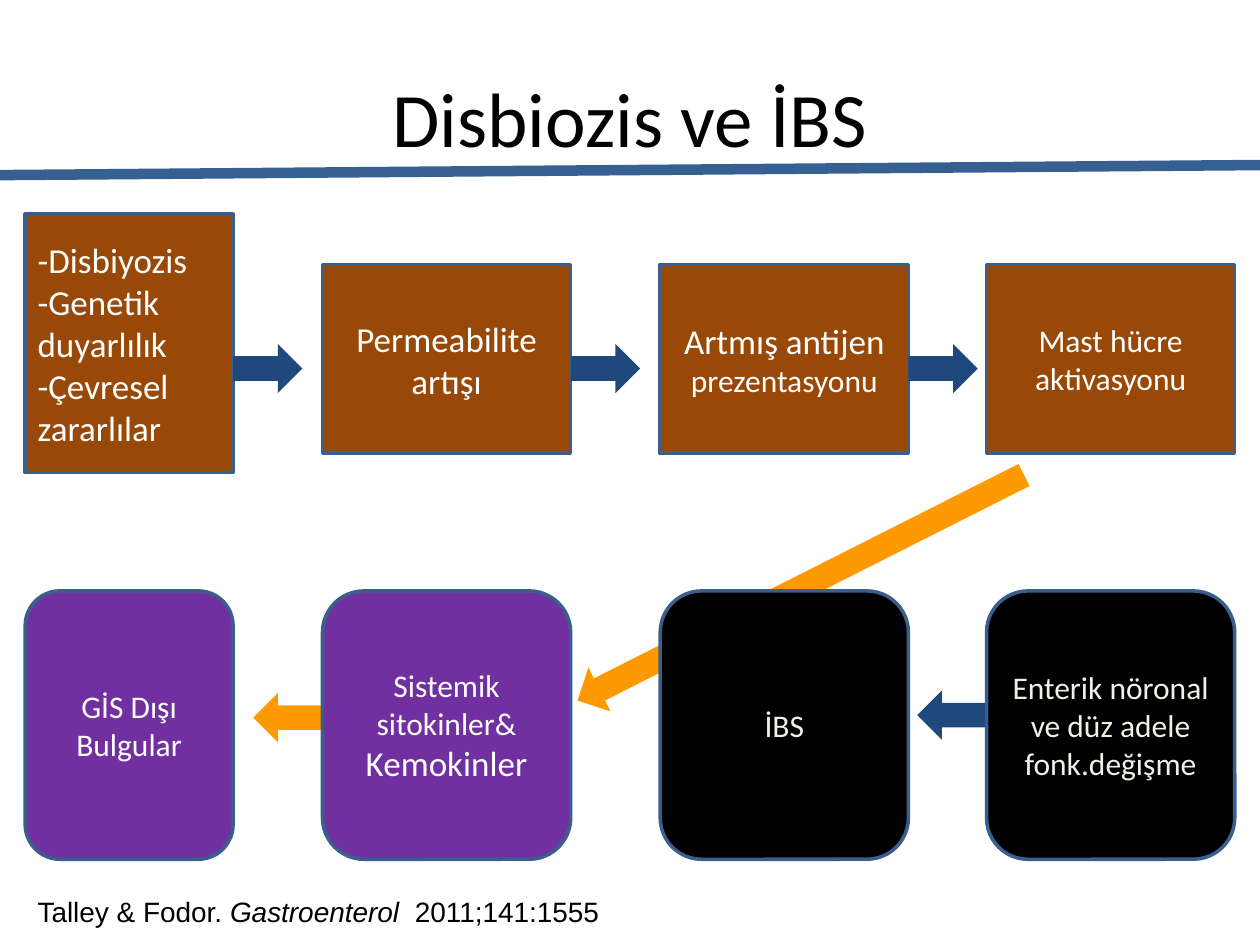
from lxml import etree
from pptx import Presentation
from pptx.dml.color import RGBColor
from pptx.enum.shapes import MSO_CONNECTOR, MSO_SHAPE
from pptx.enum.text import MSO_ANCHOR, PP_ALIGN
from pptx.oxml.ns import qn
from pptx.util import Inches, Pt

RECTANGLE = MSO_SHAPE.RECTANGLE
ROUNDED = MSO_SHAPE.ROUNDED_RECTANGLE
ARROW = MSO_SHAPE.RIGHT_ARROW
STRAIGHT = MSO_CONNECTOR.STRAIGHT
LEFT, CENTER = PP_ALIGN.LEFT, PP_ALIGN.CENTER
TOP, MIDDLE = MSO_ANCHOR.TOP, MSO_ANCHOR.MIDDLE

BROWN, PURPLE, BLACK = "984807", "7030A0", "000000"
NAVY, ORANGE = "1F497D", "FF9900"
OUTLINE, RULE = "3A5F8C", "376092"
WHITE, CREAM = "FFFFFF", "F2F1E8"

COLUMNS = [(0.2, 1.65), (2.56, 1.97), (5.24, 1.97), (7.83, 1.97)]
TOP_ROW = (2.1, 1.5)
BOTTOM_ROW = (4.69, 2.13)
ARROW_LENGTH, ARROW_HEIGHT = 0.55, 0.39


def color(value):
    return RGBColor.from_string(value)


def write_text(box, paragraphs, text_color, align=CENTER, anchor=MIDDLE, font="Calibri", wrap=True):
    frame = box.text_frame
    frame.word_wrap = wrap
    frame.vertical_anchor = anchor
    for index, spans in enumerate(paragraphs):
        para = frame.add_paragraph() if index else frame.paragraphs[0]
        para.alignment = align
        for text, formats in spans:
            span = para.add_run()
            span.text = text
            span.font.name = font
            span.font.color.rgb = color(text_color)
            for name, value in formats.items():
                setattr(span.font, name, value)


def add_label(page, left, top, width, height, paragraphs, **options):
    box = page.shapes.add_textbox(Inches(left), Inches(top), Inches(width), Inches(height))
    write_text(box, paragraphs, BLACK, **options)


def add_filled(page, kind, left, top, width, height, fill):
    shape = page.shapes.add_shape(kind, Inches(left), Inches(top), Inches(width), Inches(height))
    shape.shadow.inherit = False
    shape.fill.solid()
    shape.fill.fore_color.rgb = color(fill)
    return shape


def add_step(page, kind, column, row, fill, paragraphs, text_color=WHITE, align=CENTER):
    left, width = COLUMNS[column]
    top, height = row
    box = add_filled(page, kind, left, top, width, height, fill)
    box.line.color.rgb = color(OUTLINE)
    box.line.width = Pt(2)
    write_text(box, paragraphs, text_color, align)


def add_arrow(page, left, top, fill, rotation=0, length=ARROW_LENGTH):
    arrow = add_filled(page, ARROW, left, top, length, ARROW_HEIGHT, fill)
    arrow.line.fill.background()
    arrow.rotation = rotation


def add_rule(page, start, end):
    rule = page.shapes.add_connector(STRAIGHT, *[Inches(value) for value in start + end])
    rule.line.color.rgb = color(RULE)
    rule.line.width = Pt(6)
    etree.SubElement(rule._element.spPr, qn("a:effectLst"))


def main():
    deck = Presentation()
    deck.slide_width, deck.slide_height = Inches(10), Inches(7.5)
    page = deck.slides.add_slide(deck.slide_layouts[6])
    large, medium = {"size": Pt(20)}, {"size": Pt(18)}

    add_label(page, 0.5, 0.3, 9, 1.25, [[("Disbiozis ve İBS", {"size": Pt(44)})]])

    causes = ["-Disbiyozis", "-Genetik duyarlılık", "-Çevresel zararlılar"]
    add_step(page, RECTANGLE, 0, (1.7, 2.05), BROWN, [[(cause, large)] for cause in causes], align=LEFT)
    top_steps = [
        [("Permeabilite artışı", large)],
        [("Artmış antijen ", large), ("prezentasyonu", medium)],
        [("Mast hücre aktivasyonu", medium)],
    ]
    for column, spans in enumerate(top_steps, start=1):
        add_step(page, RECTANGLE, column, TOP_ROW, BROWN, [spans])

    for left, width in COLUMNS[:3]:
        add_arrow(page, left + width, 2.73, NAVY)
    add_arrow(page, COLUMNS[3][0] - ARROW_LENGTH, 5.48, NAVY, 180)
    add_arrow(page, COLUMNS[1][0] - ARROW_LENGTH, 5.5, ORANGE, 180)
    add_arrow(page, 4.37, 4.47, ORANGE, 153.2, 3.97)

    bottom_steps = [
        (PURPLE, WHITE, [[("GİS Dışı", medium)], [("Bulgular", medium)]]),
        (PURPLE, WHITE, [[("Sistemik sitokinler&", medium)], [("Kemokinler", large)]]),
        (BLACK, CREAM, [[("İBS", medium)]]),
        (BLACK, CREAM, [[("Enterik nöronal ve düz adele fonk.değişme", medium)]]),
    ]
    for column, (fill, text_color, paragraphs) in enumerate(bottom_steps):
        add_step(page, ROUNDED, column, BOTTOM_ROW, fill, paragraphs, text_color)

    small = {"size": Pt(16)}
    citation = [
        ("Talley & Fodor. ", small),
        ("Gastroenterol  ", {**small, "italic": True}),
        ("2011;141:1555", small),
    ]
    add_label(page, 0.2, 7.05, 4.78, 0.37, [citation], align=LEFT, anchor=TOP, font="Arial", wrap=False)
    add_rule(page, (0, 1.39), (10, 1.31))
    deck.save("out.pptx")


if __name__ == "__main__":
    main()
